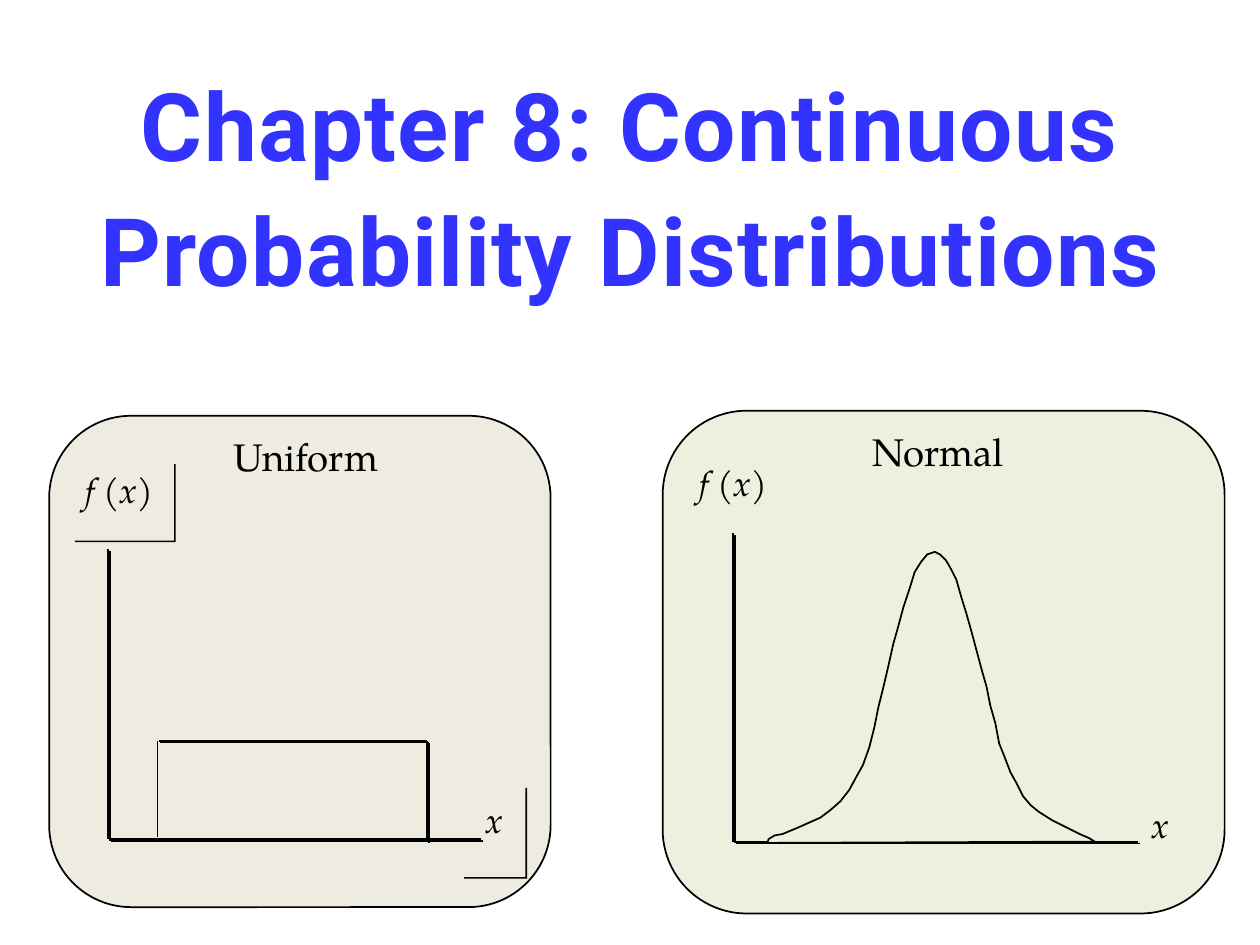
from dataclasses import dataclass
from typing import NamedTuple, Optional

from lxml.etree import SubElement
from pptx import Presentation
from pptx.dml.color import RGBColor as RGB
from pptx.enum.shapes import MSO_CONNECTOR as CONN, MSO_SHAPE as SHAPE
from pptx.enum.text import MSO_ANCHOR as ANCHOR, PP_ALIGN as ALIGN
from pptx.oxml.ns import qn
from pptx.util import Pt

PX = 9144  # EMU per px, 100 px to the inch


@dataclass(frozen=True)
class Theme:
    title: str = "3333FF"
    ink: str = "000000"
    sand: str = "EEECE1"
    green: str = "EBF1DE"
    title_font: str = "Roboto"
    font: str = "TeX Gyre Pagella"
    title_pt: int = 54
    heading_pt: int = 22
    label_pt: int = 20


class Box(NamedTuple):
    x: int
    y: int
    w: int
    h: int


class Margins(NamedTuple):
    left: int = 10
    top: int = 5
    right: int = 10
    bottom: int = 5


class Segment(NamedTuple):
    x1: int
    y1: int
    x2: int
    y2: int
    shadow: str = "000000"


class Label(NamedTuple):
    box: Box
    runs: list  # (text, italic)
    size: int
    align: ALIGN = ALIGN.LEFT
    margins: Margins = Margins()
    shadow: Optional[str] = None


T = Theme()
FX = [("f ", True), ("(", False), ("x", True), (")", False)]
X = [("x", True)]
SMALL = Margins(6, 3, 6, 3)


def emu(values) -> list:
    return [v * PX for v in values]


def set_effect(sp, shadow: Optional[str] = None) -> None:
    """Replace the theme shadow by a hard offset one, or by none."""
    effects = SubElement(sp._element.spPr, qn("a:effectLst"))
    if shadow:
        outer = SubElement(effects, qn("a:outerShdw"), blurRad="0", dist="17961",
                           dir="2700000", algn="ctr", rotWithShape="0")
        SubElement(outer, qn("a:srgbClr"), val=shadow)


def paint(sp, fill: str, line: Optional[str] = None, shadow: Optional[str] = None) -> None:
    sp.fill.solid()
    sp.fill.fore_color.rgb = RGB.from_string(fill)
    if line:
        sp.line.color.rgb = RGB.from_string(line)
        sp.line.width = Pt(1)
    else:
        sp.line.fill.background()
    set_effect(sp, shadow)


def set_margins(tf, m: Margins) -> None:
    tf.margin_left, tf.margin_top, tf.margin_right, tf.margin_bottom = emu(m)


def add_panel(s, box: Box, fill: str):
    """Start a group with its rounded background and return the group's shapes."""
    shapes = s.shapes.add_group_shape().shapes
    sp = shapes.add_shape(SHAPE.ROUNDED_RECTANGLE, *emu(box))
    sp.adjustments[0] = 0.167
    paint(sp, fill, T.ink)
    return shapes


def add_label(shapes, label: Label, fill: str) -> None:
    sp = shapes.add_shape(SHAPE.RECTANGLE, *emu(label.box))
    paint(sp, fill, shadow=label.shadow)
    tf = sp.text_frame
    tf.word_wrap = False
    tf.vertical_anchor = ANCHOR.TOP
    set_margins(tf, label.margins)
    p = tf.paragraphs[0]
    p.alignment = label.align
    for text, italic in label.runs:
        r = p.add_run()
        r.text = text
        r.font.name, r.font.size, r.font.italic = T.font, Pt(label.size), italic
        r.font.color.rgb = RGB.from_string(T.ink)


def add_segment(shapes, seg: Segment) -> None:
    line = shapes.add_connector(CONN.STRAIGHT, *emu(seg[:4]))
    line.line.color.rgb = RGB.from_string(T.ink)
    line.line.width = Pt(1)
    set_effect(line, seg.shadow)


def add_outline(shapes, points: list, fill: str, line: Optional[str] = None,
                close: bool = False) -> None:
    builder = shapes.build_freeform(*points[0], scale=PX)
    builder.add_line_segments(points[1:], close=close)
    paint(builder.convert_to_shape(), fill, line)


def add_title(s) -> None:
    sp = s.shapes.title
    sp.left, sp.top, sp.width, sp.height = emu((26, 84, 949, 114))
    tf = sp.text_frame
    tf.text = "Chapter 8: Continuous Probability Distributions"
    tf.word_wrap = True
    tf.vertical_anchor = ANCHOR.MIDDLE
    set_margins(tf, Margins(top=9))
    p = tf.paragraphs[0]
    p.alignment, p.line_spacing = ALIGN.CENTER, 1.1
    r = p.runs[0]
    r.font.name, r.font.size, r.font.bold = T.title_font, Pt(T.title_pt), True
    r.font.color.rgb = RGB.from_string(T.title)
    r._r.get_or_add_rPr().set("spc", "80")


def add_uniform(s) -> None:
    shapes = add_panel(s, Box(39, 330, 398, 390), T.sand)
    add_segment(shapes, Segment(86, 436, 86, 666))
    add_label(shapes, Label(Box(58, 367, 80, 62), FX, T.label_pt, shadow=T.ink), T.sand)
    add_label(shapes, Label(Box(367, 624, 50, 72), X, T.label_pt,
                            margins=Margins(left=18, top=10), shadow=T.ink), T.sand)
    add_segment(shapes, Segment(87, 666, 382, 666))
    add_outline(shapes, [(125, 665), (125, 589), (339, 589), (339, 665), (122, 665)], T.sand)
    for seg in (Segment(339, 588, 339, 668), Segment(126, 588, 339, 588),
                Segment(125, 588, 125, 664, T.sand)):
        add_segment(shapes, seg)
    add_label(shapes, Label(Box(161, 339, 164, 68), [("Uniform", False)],
                            T.heading_pt, ALIGN.CENTER), T.sand)


def add_normal(s) -> None:
    left = [(742, 438), (736, 440), (731, 446), (726, 454), (722, 467), (717, 482),
            (713, 497), (709, 511), (705, 529), (701, 546), (697, 562), (694, 577),
            (690, 593), (685, 607), (680, 616), (674, 627), (667, 636), (659, 643),
            (651, 649), (642, 653), (633, 657), (621, 662), (615, 663), (610, 666), (609, 669)]
    right = [(869, 668), (864, 665), (857, 662), (847, 657), (835, 651), (824, 644),
             (818, 639), (812, 632), (807, 622), (802, 613), (797, 600), (793, 590),
             (790, 574), (786, 560), (783, 545), (779, 531), (775, 516), (771, 501),
             (767, 487), (763, 474), (759, 460), (755, 452), (751, 445), (746, 440)]
    shapes = add_panel(s, Box(526, 326, 446, 399), T.green)
    add_segment(shapes, Segment(583, 668, 903, 668))
    add_label(shapes, Label(Box(908, 635, 35, 58), X, T.label_pt, margins=SMALL), T.green)
    add_segment(shapes, Segment(582, 668, 582, 423))
    add_label(shapes, Label(Box(549, 363, 79, 58), FX, T.label_pt, margins=SMALL), T.green)
    add_outline(shapes, left + right, T.green, T.ink, close=True)
    add_label(shapes, Label(Box(660, 335, 169, 69), [("Normal", False)],
                            T.heading_pt, ALIGN.CENTER), T.green)


def main() -> None:
    prs = Presentation()
    prs.slide_width, prs.slide_height = emu((1000, 750))
    s = prs.slides.add_slide(prs.slide_layouts[5])
    add_title(s)
    add_uniform(s)
    add_normal(s)
    prs.save("out.pptx")


if __name__ == "__main__":
    main()
